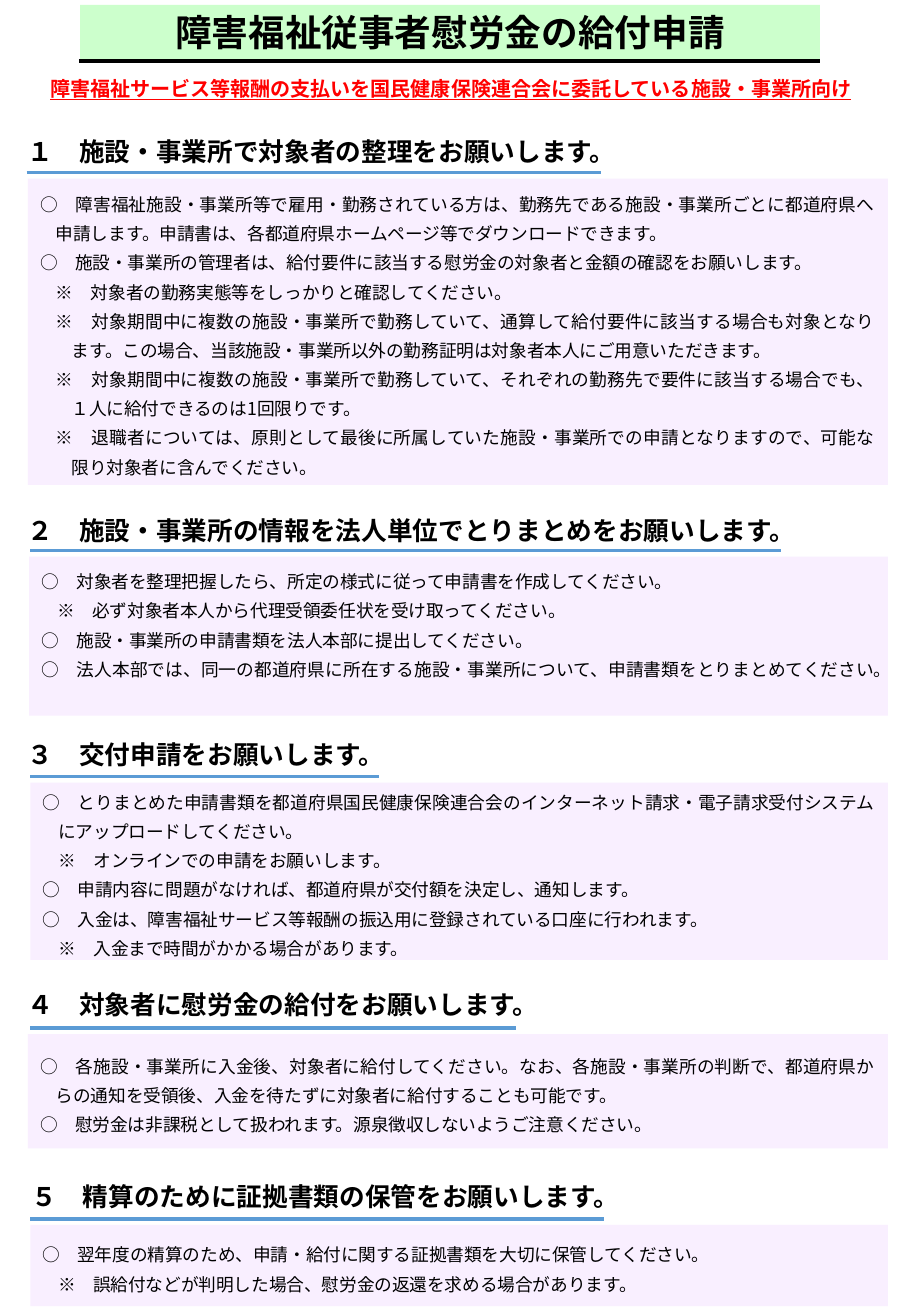
"""Build the one-page guide to applying for the welfare workers' reward."""
from dataclasses import dataclass

from lxml import etree
from pptx import Presentation
from pptx import util as u
from pptx.dml.color import RGBColor
from pptx.enum import lang, shapes, text
from pptx.oxml.ns import qn

FONT = "Noto Sans CJK JP"
COLORS = {"ink": "000000", "alert": "FF0000", "title": "CCFFCC", "rule": "5B9BD5", "panel": "F9EFFF"}
INDENTS = {"○": 0.13, "※": 0.26}
HANG = 0.13
PANEL_RIGHT = 7.31


@dataclass
class Section:
    """A numbered heading, its rule and its panel of list items."""
    heading: str
    head_left: float
    head_top: float
    rule_left: float
    rule_right: float
    rule_y: float
    panel_left: float
    panel_height: float
    items: list[str]


SECTIONS = [
    Section("１　施設・事業所で対象者の整理をお願いします。", 0.13, 0.96, 0.22, 4.95, 1.42, 0.23, 2.52, [
        "○　障害福祉施設・事業所等で雇用・勤務されている方は、勤務先である施設・事業所ごとに都道府県へ"
        "申請します。申請書は、各都道府県ホームページ等でダウンロードできます。",
        "○　施設・事業所の管理者は、給付要件に該当する慰労金の対象者と金額の確認をお願いします。",
        "※　対象者の勤務実態等をしっかりと確認してください。",
        "※　対象期間中に複数の施設・事業所で勤務していて、通算して給付要件に該当する場合も対象となり"
        "ます。この場合、当該施設・事業所以外の勤務証明は対象者本人にご用意いただきます。",
        "※　対象期間中に複数の施設・事業所で勤務していて、それぞれの勤務先で要件に該当する場合でも、"
        "１人に給付できるのは1回限りです。",
        "※　退職者については、原則として最後に所属していた施設・事業所での申請となりますので、可能な"
        "限り対象者に含んでください。",
    ]),
    Section("２　施設・事業所の情報を法人単位でとりまとめをお願いします。", 0.13, 4.08, 0.25, 6.43, 4.53, 0.24, 1.31, [
        "○　対象者を整理把握したら、所定の様式に従って申請書を作成してください。",
        "※　必ず対象者本人から代理受領委任状を受け取ってください。",
        "○　施設・事業所の申請書類を法人本部に提出してください。",
        "○　法人本部では、同一の都道府県に所在する施設・事業所について、申請書類をとりまとめてください。　",
    ]),
    Section("３　交付申請をお願いします。", 0.13, 5.92, 0.25, 3.12, 6.39, 0.25, 1.46, [
        "○　とりまとめた申請書類を都道府県国民健康保険連合会のインターネット請求・電子請求受付システム"
        "にアップロードしてください。",
        "※　オンラインでの申請をお願いします。",
        "○　申請内容に問題がなければ、都道府県が交付額を決定し、通知します。",
        "○　入金は、障害福祉サービス等報酬の振込用に登録されている口座に行われます。",
        "※　入金まで時間がかかる場合があります。",
    ]),
    Section("４　対象者に慰労金の給付をお願いします。", 0.13, 7.98, 0.25, 4.25, 8.46, 0.23, 0.94, [
        "○　各施設・事業所に入金後、対象者に給付してください。なお、各施設・事業所の判断で、都道府県か"
        "らの通知を受領後、入金を待たずに対象者に給付することも可能です。",
        "○　慰労金は非課税として扱われます。源泉徴収しないようご注意ください。",
    ]),
    Section("５　精算のために証拠書類の保管をお願いします。", 0.16, 9.56, 0.25, 4.97, 10.03, 0.25, 0.67, [
        "○　翌年度の精算のため、申請・給付に関する証拠書類を大切に保管してください。",
        "※　誤給付などが判明した場合、慰労金の返還を求める場合があります。",
    ]),
]


def rgb(name: str) -> RGBColor:
    """Look up a named colour."""
    return RGBColor.from_string(COLORS[name])


def place(sp, left: float, top: float, width: float, height: float) -> None:
    """Move and size a shape, in inches."""
    sp.left, sp.top = u.Inches(left), u.Inches(top)
    sp.width, sp.height = u.Inches(width), u.Inches(height)


def write(sp, lines: list[str], size: float, align, bold: bool = True, color: str = "ink") -> list:
    """Fill a shape with formatted paragraphs and return them."""
    tf = sp.text_frame
    tf.word_wrap = True
    tf.auto_size = text.MSO_AUTO_SIZE.NONE
    tf.vertical_anchor = text.MSO_ANCHOR.MIDDLE
    tf.text = "\n".join(lines)
    for p in tf.paragraphs:
        p.alignment = align
        p.space_before = u.Pt(0)
        p.font.size, p.font.bold, p.font.name = u.Pt(size), bold, FONT
        p.font.color.rgb = rgb(color)
        p.font.language_id = lang.MSO_LANGUAGE_ID.JAPANESE
        props = p._p.pPr.find(qn("a:defRPr"))
        etree.SubElement(props, qn("a:ea"), typeface=FONT)
        props.addprevious(etree.Element(qn("a:buNone")))
    return list(tf.paragraphs)


def fill(sp, color: str) -> None:
    """Give a shape a plain fill without an outline."""
    sp.fill.solid()
    sp.fill.fore_color.rgb = rgb(color)
    sp.line.fill.background()


def add_rule(s, left: float, right: float, y: float, color: str) -> None:
    """Draw a horizontal rule."""
    rule = s.shapes.add_connector(
        shapes.MSO_CONNECTOR.STRAIGHT, u.Inches(left), u.Inches(y), u.Inches(right), u.Inches(y))
    rule.line.color.rgb = rgb(color)
    rule.line.width = u.Pt(2.25)
    etree.SubElement(rule._element.spPr, qn("a:effectLst"))


def add_text(s, left: float, top: float, width: float, height: float):
    """Add an empty text box, in inches."""
    return s.shapes.add_textbox(*map(u.Inches, (left, top, width, height)))


def add_section(s, panel, section: Section) -> None:
    """Draw a section, using the given shape as its panel."""
    heading = add_text(s, section.head_left, section.head_top, 6.51, 0.57)
    write(heading, [section.heading], 15.2, text.PP_ALIGN.LEFT)
    add_rule(s, section.rule_left, section.rule_right, section.rule_y, "rule")
    place(panel, section.panel_left, section.rule_y + 0.05,
          PANEL_RIGHT - section.panel_left, section.panel_height)
    fill(panel, "panel")
    for p in write(panel, section.items, 10.5, text.PP_ALIGN.JUSTIFY, bold=False):
        p.line_spacing = u.Pt(17.3)
        pPr = p._p.pPr
        pPr.set("marL", str(u.Inches(INDENTS[p.text[0]])))
        pPr.set("indent", str(u.Inches(-HANG)))


def main() -> None:
    """Build and save the slide."""
    prs = Presentation()
    prs.slide_width, prs.slide_height = u.Inches(7.5), u.Inches(10.83)
    s = prs.slides.add_slide(prs.slide_layouts.get_by_name("Comparison"))
    title, *panels = s.placeholders
    place(title, 0.66, 0.04, 6.09, 0.45)
    fill(title, "title")
    write(title, ["障害福祉従事者慰労金の給付申請"], 21.7, text.PP_ALIGN.CENTER)
    tf = title.text_frame
    tf.margin_left = tf.margin_right = u.Inches(0.08)
    tf.margin_top = tf.margin_bottom = u.Inches(0.04)
    add_rule(s, 0.65, 6.75, 0.5, "ink")

    audience = add_text(s, 0.23, 0.57, 6.96, 0.31)
    line = "障害福祉サービス等報酬の支払いを国民健康保険連合会に委託している施設・事業所向け"
    for p in write(audience, [line], 11.9, text.PP_ALIGN.CENTER, color="alert"):
        p.font.underline = True

    panels.append(add_text(s, 0, 0, 1, 1))
    for panel, section in zip(panels, SECTIONS):
        add_section(s, panel, section)
    prs.save("out.pptx")


if __name__ == "__main__":
    main()
